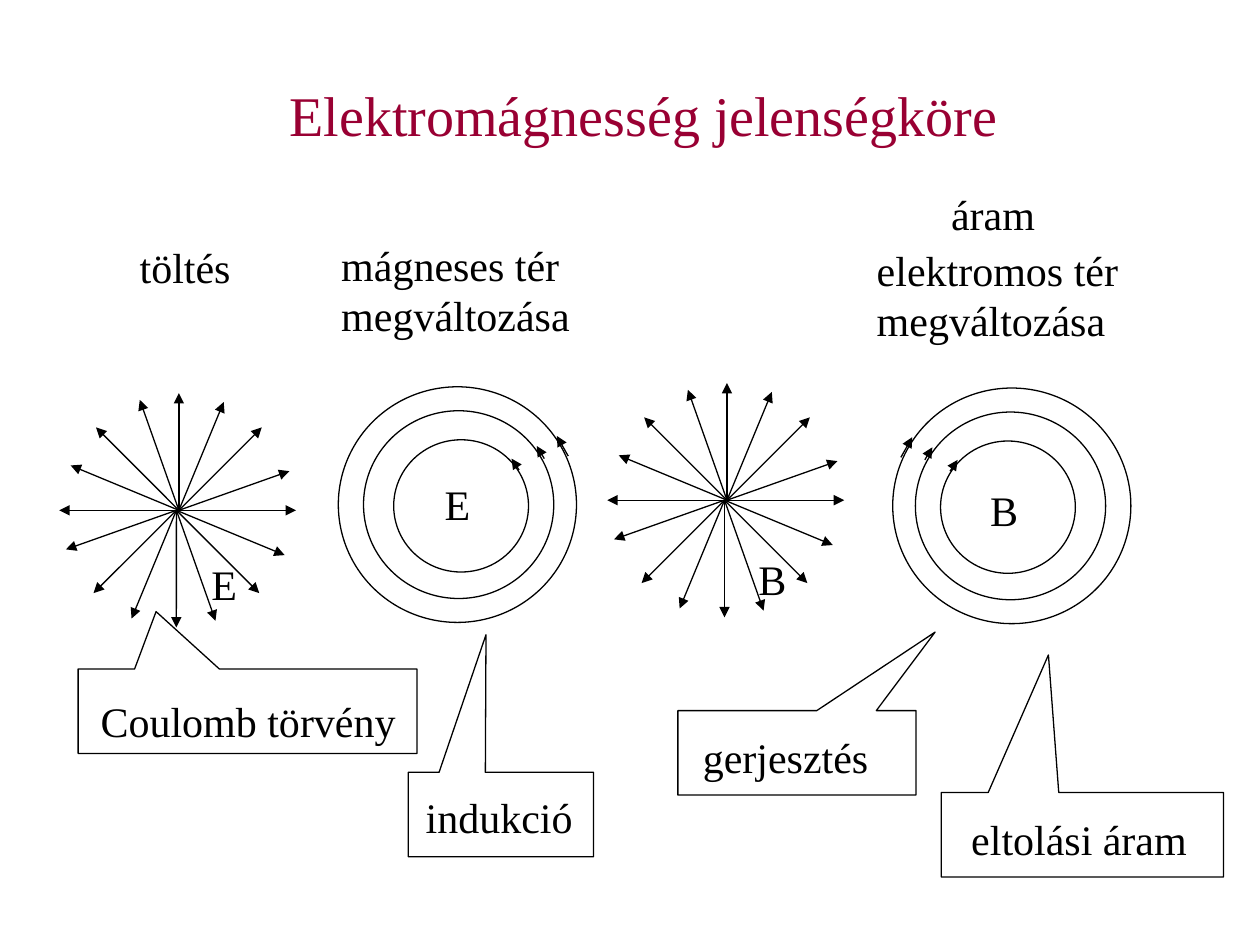
import math

from lxml import etree
from pptx import Presentation
from pptx import util as u
from pptx.dml.color import RGBColor
from pptx.enum import shapes, text
from pptx.oxml.ns import qn

BLACK = RGBColor(0x00, 0x00, 0x00)
WHITE = RGBColor(0xFF, 0xFF, 0xFF)
CRIMSON = RGBColor(0x99, 0x00, 0x33)

SPOKE_LENGTH = 0.93
SPOKE_ANGLES = [quarter + step for quarter in (0, 90, 180, 270)
                for step in (0, 19.5, 45, 67.5)]

# Centre offset, top offset, width, height, then arrow start and arrow tip
RINGS = [
    (0, 0, 1.89, 1.87, (0.88, 0.55), (0.79, 0.39)),
    (0.01, 0.19, 1.51, 1.49, (0.69, 0.57), (0.63, 0.47)),
    (0.03, 0.42, 1.07, 1.05, (0.49, 0.66), (0.43, 0.57)),
]


class FieldSlide:
    font = "Times New Roman"
    size = 24
    line_width = u.Pt(0.75)

    def __init__(self, slide):
        self.slide = slide

    def label(self, content, left, top, width, height=0.5, size=size, color=BLACK, wrap=False):
        box = self.slide.shapes.add_textbox(*map(u.Inches, (left, top, width, height)))
        frame = box.text_frame
        frame.text = content
        frame.word_wrap = wrap
        frame.margin_right = 0  # room for the widest line
        frame.auto_size = text.MSO_AUTO_SIZE.SHAPE_TO_FIT_TEXT
        for paragraph in frame.paragraphs:
            for run in paragraph.runs:
                run.font.name = self.font
                run.font.size = u.Pt(size)
                run.font.color.rgb = color

    def outline(self, parent, preset, left, top, width, height, filled=True):
        shape = parent.shapes.add_shape(preset, *map(u.Inches, (left, top, width, height)))
        shape.shadow.inherit = False
        if filled:
            shape.fill.solid()
            shape.fill.fore_color.rgb = WHITE
        else:
            shape.fill.background()
        shape.line.color.rgb = BLACK
        shape.line.width = self.line_width
        return shape

    def arrow(self, parent, start, tip):
        line = parent.shapes.add_connector(
            shapes.MSO_CONNECTOR.STRAIGHT, *map(u.Inches, (*start, *tip)))
        line.line.color.rgb = BLACK
        line.line.width = self.line_width
        etree.SubElement(line.line._get_or_add_ln(), qn("a:tailEnd"), type="triangle")
        etree.SubElement(line._element.spPr, qn("a:effectLst"))

    def radial_field(self, x, y):
        """Arrows pointing outwards; the two halves start slightly apart."""
        group = self.slide.shapes.add_group_shape()
        for angle in SPOKE_ANGLES:
            hub = x + (0.01 if angle < 180 else -0.01)
            turn = math.radians(angle)
            tip = (hub + SPOKE_LENGTH * math.cos(turn), y - SPOKE_LENGTH * math.sin(turn))
            self.arrow(group, (hub, y), tip)

    def circular_field(self, x, top, side):
        """Nested rings with direction arrows on the right (1) or left (-1) side."""
        group = self.slide.shapes.add_group_shape()
        for dx, dy, width, height, _, _ in RINGS:
            self.outline(group, shapes.MSO_SHAPE.OVAL,
                         x + side * dx - width / 2, top + dy, width, height)
        for *_, start, tip in RINGS:
            self.arrow(group, *((x + side * dx, top + dy) for dx, dy in (start, tip)))

    def callout(self, left, top, width, pointer, filled=True):
        shape = self.outline(self.slide, shapes.MSO_SHAPE.RECTANGULAR_CALLOUT,
                             left, top, width, 0.67, filled)
        shape.adjustments[0], shape.adjustments[1] = pointer


def main():
    deck = Presentation()
    deck.slide_width, deck.slide_height = u.Inches(10), u.Inches(7.5)
    page = FieldSlide(deck.slides.add_slide(deck.slide_layouts[6]))

    page.label("Elektromágnesség jelenségköre", 2.2, 0.59, 5.82, 0.63, size=32, color=CRIMSON)

    page.circular_field(3.63, 3.07, 1)
    page.radial_field(1.41, 4.05)
    page.circular_field(8.03, 3.08, -1)
    page.radial_field(5.76, 3.97)

    page.label("áram", 7.45, 1.45, 0.87)
    page.label("töltés", 1.01, 1.87, 0.92)
    page.label("elektromos tér\nmegváltozása", 6.86, 1.89, 2.11, 0.9)
    page.label("mágneses tér\nmegváltozása", 2.61, 1.85, 2.01, 0.9)

    page.label("E", 1.58, 4.38, 0.6, wrap=True)
    page.label("E", 3.43, 3.75, 0.6, wrap=True)
    page.label("B", 5.92, 4.34, 0.42)
    page.label("B", 7.76, 3.8, 0.42)

    page.callout(0.62, 5.31, 2.69, (-0.27, -1.18), filled=False)
    page.label("Coulomb törvény", 0.7, 5.47, 2.54)
    page.callout(3.24, 6.13, 1.47, (-0.08, -2.13))
    page.label("indukció", 3.28, 6.23, 1.45, wrap=True)
    page.callout(5.38, 5.64, 1.89, (0.58, -1.43))
    page.label("gerjesztés", 5.48, 5.76, 1.51)
    page.callout(7.47, 6.29, 2.24, (-0.12, -2.13), filled=False)
    page.label("eltolási áram", 7.61, 6.41, 1.91)

    deck.save("out.pptx")


if __name__ == "__main__":
    main()
